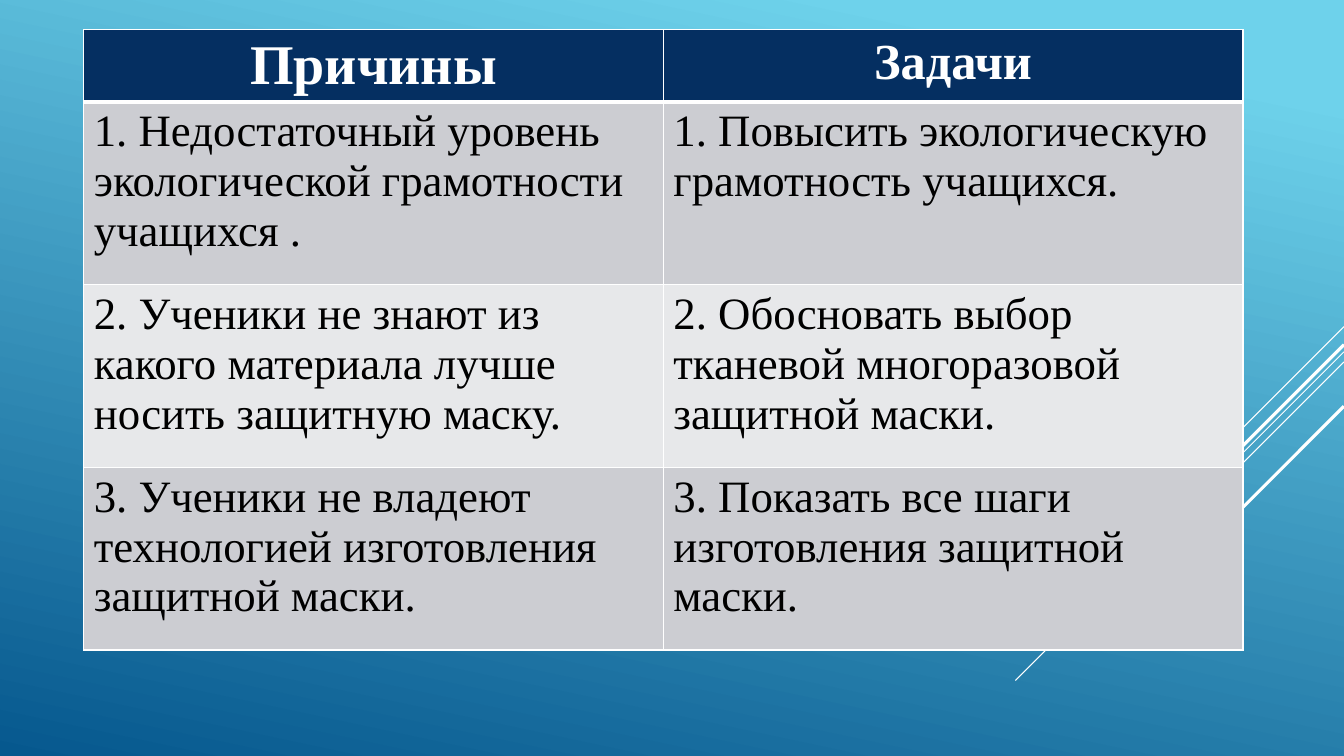
from lxml.etree import SubElement
from pptx import Presentation
from pptx.dml.color import RGBColor
from pptx.enum.shapes import MSO_CONNECTOR as CONNECTOR
from pptx.enum.text import PP_ALIGN as ALIGN
from pptx.oxml.ns import qn
from pptx.util import Pt

COLORS = {
    "sky": "6ED2EB",
    "sea": "06588E",
    "header": "052F61",
    "odd": "CCCDD2",
    "even": "E7E8EA",
    "white": "FFFFFF",
    "black": "000000",
}
FONT = "Times New Roman"
SLIDE_WIDTH, SLIDE_HEIGHT = 960, 540

# Diagonal rays at 45 degrees: height at the right edge, horizontal run, width
RAYS = [
    (233.3, 72, 0.75),
    (251.3, 234.7, 0.75),
    (258.5, 149.4, 0.75),
    (246.2, 137.5, 2.25),
    (290.2, 100.1, 2.25),
]

HEADINGS = [("Причины", 40), ("Задачи", 36)]
PAIRS = [
    ("1. Недостаточный уровень экологической грамотности учащихся .",
     "1. Повысить экологическую грамотность учащихся."),
    ("2. Ученики не знают из какого материала лучше носить защитную маску.",
     "2. Обосновать выбор тканевой многоразовой защитной маски."),
    ("3. Ученики не владеют технологией изготовления защитной маски.",
     "3. Показать все шаги изготовления защитной маски."),
]
COLUMN_WIDTH, HEADER_HEIGHT, ROW_HEIGHT = 414, 51.5, 130.5


def rgb(name):
    return RGBColor.from_string(COLORS[name])


def paint_background(slide):
    fill = slide.background.fill
    fill.gradient()
    fill.gradient_angle = 258
    for stop, position, name in zip(fill.gradient_stops, (0.1, 1), ("sky", "sea")):
        stop.position = position
        stop.color.rgb = rgb(name)


def add_ray(slide, top, run, width):
    ray = slide.shapes.add_connector(
        CONNECTOR.STRAIGHT, Pt(SLIDE_WIDTH), Pt(top),
        Pt(SLIDE_WIDTH - run), Pt(top + run))
    ray.line.color.rgb = rgb("white")
    ray.line.width = Pt(width)
    SubElement(ray._element.spPr, qn("a:effectLst"))


def set_borders(cell, top, bottom):
    """Draw white borders; they must precede the fill in the cell properties."""
    properties = cell._tc.get_or_add_tcPr()
    for side, width in (("L", 1), ("R", 1), ("T", top), ("B", bottom)):
        border = SubElement(properties, qn(f"a:ln{side}"), w=str(Pt(width)))
        solid = SubElement(border, qn("a:solidFill"))
        SubElement(solid, qn("a:srgbClr"), val=COLORS["white"])


def fill_cell(cell, text, size, fill, color="black", heading=False):
    cell.fill.solid()
    cell.fill.fore_color.rgb = rgb(fill)
    cell.text_frame.text = text
    paragraph = cell.text_frame.paragraphs[0]
    paragraph.alignment = ALIGN.CENTER if heading else ALIGN.LEFT
    font = paragraph.runs[0].font
    font.name = FONT
    font.size = Pt(size)
    font.bold = heading
    font.color.rgb = rgb(color)


def add_goals_table(slide):
    height = HEADER_HEIGHT + ROW_HEIGHT * len(PAIRS)
    goals = slide.shapes.add_table(
        len(PAIRS) + 1, len(HEADINGS), Pt(59.8), Pt(21.3),
        Pt(COLUMN_WIDTH * len(HEADINGS)), Pt(height)).table
    for index, row in enumerate(goals.rows):
        row.height = Pt(ROW_HEIGHT if index else HEADER_HEIGHT)
        for cell in row.cells:
            set_borders(cell, top=3 if index == 1 else 1,
                        bottom=1 if index else 3)

    for column, (heading, size) in enumerate(HEADINGS):
        fill_cell(goals.cell(0, column), heading, size, "header", "white", True)
    for index, pair in enumerate(PAIRS, start=1):
        for column, text in enumerate(pair):
            fill_cell(goals.cell(index, column), text, 32,
                      "odd" if index % 2 else "even")


def main():
    presentation = Presentation()
    presentation.slide_width = Pt(SLIDE_WIDTH)
    presentation.slide_height = Pt(SLIDE_HEIGHT)
    slide = presentation.slides.add_slide(presentation.slide_layouts[6])
    paint_background(slide)
    for ray in RAYS:
        add_ray(slide, *ray)
    add_goals_table(slide)
    presentation.save("out.pptx")


if __name__ == "__main__":
    main()
